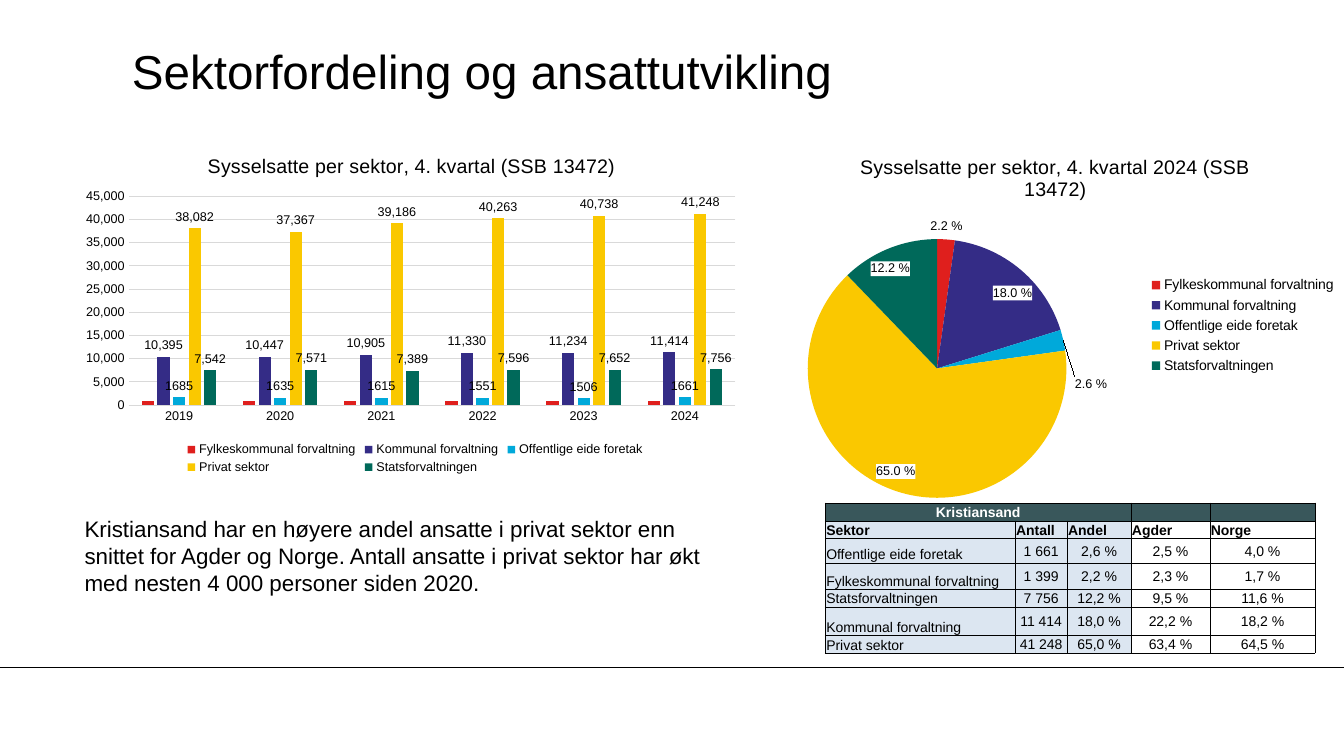
"""Build the slide on employment by sector in Kristiansand."""
from dataclasses import dataclass
from typing import Any

import pptx
import pptx.chart.data
import pptx.dml.color
import pptx.enum.chart
import pptx.enum.shapes
import pptx.enum.text
import pptx.oxml
import pptx.oxml.ns
import pptx.util

Pt = pptx.util.Pt
RGBColor = pptx.dml.color.RGBColor
Align = pptx.enum.text.PP_ALIGN
Anchor = pptx.enum.text.MSO_ANCHOR
ChartKind = pptx.enum.chart.XL_CHART_TYPE
LegendSide = pptx.enum.chart.XL_LEGEND_POSITION
LabelSide = pptx.enum.chart.XL_LABEL_POSITION
NO_TICK = pptx.enum.chart.XL_TICK_MARK.NONE

BLACK = RGBColor(0x00, 0x00, 0x00)
WHITE = RGBColor(0xFF, 0xFF, 0xFF)
GRID = RGBColor(0xD9, 0xD9, 0xD9)
HEADER = RGBColor(0x39, 0x57, 0x5B)
PALE_BLUE = RGBColor(0xDC, 0xE6, 0xF1)
RED = RGBColor(0xDF, 0x1F, 0x1D)
INDIGO = RGBColor(0x34, 0x2C, 0x86)
CYAN = RGBColor(0x00, 0xA9, 0xDA)
YELLOW = RGBColor(0xFA, 0xC8, 0x00)
GREEN = RGBColor(0x00, 0x69, 0x5A)

YEARS = ["2019", "2020", "2021", "2022", "2023", "2024"]
PERCENT = r"0.0\ %"
CHART_NS = 'xmlns:c="http://schemas.openxmlformats.org/drawingml/2006/chart"'
DRAW_NS = 'xmlns:a="http://schemas.openxmlformats.org/drawingml/2006/main"'


@dataclass(frozen=True)
class Box:
    left: float
    top: float
    width: float
    height: float

    def lengths(self) -> list[Any]:
        return [Pt(v) for v in (self.left, self.top, self.width, self.height)]


@dataclass(frozen=True)
class Sector:
    name: str
    color: RGBColor
    employed: list[int]
    share: float
    label_format: str | None = "#,##0"


SECTORS = [
    Sector("Fylkeskommunal forvaltning", RED, [1000] * 6, 2.2, None),
    Sector("Kommunal forvaltning", INDIGO, [10395, 10447, 10905, 11330, 11234, 11414], 18),
    Sector("Offentlige eide foretak", CYAN, [1685, 1635, 1615, 1551, 1506, 1661], 2.6, "General"),
    Sector("Privat sektor", YELLOW, [38082, 37367, 39186, 40263, 40738, 41248], 65),
    Sector("Statsforvaltningen", GREEN, [7542, 7571, 7389, 7596, 7652, 7756], 12.2),
]
TABLE_ROWS = [
    ["Kristiansand", "", "", "", ""],
    ["Sektor", "Antall", "Andel", "Agder", "Norge"],
    ["Offentlige eide foretak", "1 661", "2,6 %", "2,5 %", "4,0 %"],
    ["Fylkeskommunal forvaltning", "1 399", "2,2 %", "2,3 %", "1,7 %"],
    ["Statsforvaltningen", "7 756", "12,2 %", "9,5 %", "11,6 %"],
    ["Kommunal forvaltning", "11 414", "18,0 %", "22,2 %", "18,2 %"],
    ["Privat sektor", "41 248", "65,0 %", "63,4 %", "64,5 %"],
]
COLUMN_WIDTHS = [135.6, 37.2, 45.6, 56.4, 75.2]
ROW_HEIGHTS = [12.6, 12.6, 17.3, 18.7, 12.6, 20.2, 12.6]


def apply(target: Any, values: dict[str, Any]) -> None:
    for attribute, value in values.items():
        setattr(target, attribute, value)


def set_font(font: Any, size: float, color: RGBColor = BLACK, bold: bool = False) -> None:
    apply(font, {"name": "Arial", "size": Pt(size), "bold": bold})
    font.color.rgb = color


def add_text(slide: Any, box: Box, text: str, size: float, frame_format: dict[str, Any]) -> None:
    frame = slide.shapes.add_textbox(*box.lengths()).text_frame
    apply(frame, {"word_wrap": True, **frame_format})
    frame.text = text
    set_font(frame.paragraphs[0].runs[0].font, size)


def place(parent: Any, index: int, **values: float) -> None:
    for previous in parent.findall(pptx.oxml.ns.qn("c:layout")):
        parent.remove(previous)
    modes = ""
    if "w" in values:
        target = '<c:layoutTarget val="inner"/>' if parent.tag.endswith("plotArea") else ""
        modes = target + '<c:xMode val="edge"/><c:yMode val="edge"/>'
    sizes = "".join(f'<c:{key} val="{value}"/>' for key, value in values.items())
    parent.insert(index, pptx.oxml.parse_xml(
        f"<c:layout {CHART_NS}><c:manualLayout>{modes}{sizes}</c:manualLayout></c:layout>"))


def add_chart(slide: Any, kind: Any, box: Box, data: Any, title: str,
              side: Any, legend_size: float) -> Any:
    chart = slide.shapes.add_chart(kind, *box.lengths(), data).chart
    set_font(chart.font, 10)
    chart.has_title = True
    chart.chart_title.include_in_layout = False
    chart.chart_title.text_frame.text = title
    set_font(chart.chart_title.text_frame.paragraphs[0].runs[0].font, 14)
    chart.has_legend = True
    apply(chart.legend, {"position": side, "include_in_layout": False})
    set_font(chart.legend.font, legend_size)
    return chart


def add_sector_columns(slide: Any) -> None:
    data = pptx.chart.data.CategoryChartData()
    data.categories = YEARS
    for sector in SECTORS:
        data.add_series(sector.name, sector.employed)
    chart = add_chart(slide, ChartKind.COLUMN_CLUSTERED, Box(53.3, 98.6, 481.7, 244.8), data,
                      "Sysselsatte per sektor, 4. kvartal (SSB 13472)", LegendSide.BOTTOM, 9)
    plot = chart.plots[0]
    apply(plot, {"gap_width": 219, "overlap": -27, "vary_by_categories": False})
    for sector, series in zip(SECTORS, plot.series):
        series.format.fill.solid()
        series.format.fill.fore_color.rgb = sector.color
        if sector.label_format:
            apply(series.data_labels, {
                "show_value": True, "number_format": sector.label_format,
                "number_format_is_linked": False, "position": LabelSide.OUTSIDE_END})
            set_font(series.data_labels.font, 9)
    for axis in (chart.category_axis, chart.value_axis):
        apply(axis, {"major_tick_mark": NO_TICK, "minor_tick_mark": NO_TICK})
        set_font(axis.tick_labels.font, 9)
    apply(chart.value_axis, {"minimum_scale": 0, "maximum_scale": 45000, "major_unit": 5000})
    apply(chart.value_axis.tick_labels,
          {"number_format": "#,##0", "number_format_is_linked": False})
    chart.value_axis.format.line.fill.background()
    for line in (chart.category_axis.format.line, chart.value_axis.major_gridlines.format.line):
        line.color.rgb = GRID
        line.width = Pt(0.75)
    place(chart._chartSpace.xpath(".//c:plotArea")[0], 0, x=0.08, y=0.17, w=0.9, h=0.61)
    place(chart.legend._element, 1, x=0.16, y=0.88, w=0.69, h=0.11)


def add_share_pie(slide: Any) -> None:
    data = pptx.chart.data.CategoryChartData()
    data.categories = [sector.name for sector in SECTORS]
    data.add_series("Series 1", [sector.share for sector in SECTORS])
    chart = add_chart(slide, ChartKind.PIE, Box(547.9, 98.6, 411.8, 267.8), data,
                      "Sysselsatte per sektor, 4. kvartal 2024 (SSB 13472)", LegendSide.RIGHT, 10)
    series = chart.plots[0].series[0]
    for index, sector in enumerate(SECTORS):
        fill = series.points[index].format.fill
        fill.solid()
        fill.fore_color.rgb = sector.color
    labels = series.data_labels
    apply(labels, {"show_percentage": True, "show_value": False, "number_format": PERCENT,
                   "number_format_is_linked": False, "position": LabelSide.BEST_FIT})
    set_font(labels.font, 9)
    labels._element.find(pptx.oxml.ns.qn("c:numFmt")).addnext(pptx.oxml.parse_xml(
        f'<c:spPr {CHART_NS} {DRAW_NS}><a:solidFill><a:srgbClr val="{WHITE}"/>'
        "</a:solidFill></c:spPr>"))
    enterprise_label = series.points[2].data_label
    enterprise_label.position = LabelSide.OUTSIDE_END
    set_font(enterprise_label.font, 9)
    label = labels._element.xpath("c:dLbl")[0]
    for tag, shown in {"c:showVal": "0", "c:showPercent": "1"}.items():
        label.find(pptx.oxml.ns.qn(tag)).set("val", shown)
    place(label, 1, x=0.01, y=0.14)
    label.insert(2, pptx.oxml.parse_xml(
        f'<c:numFmt {CHART_NS} formatCode="{PERCENT}" sourceLinked="0"/>'))
    place(chart._chartSpace.xpath(".//c:plotArea")[0], 0, x=0.07, y=0.27, w=0.45, h=0.69)
    place(chart.legend._element, 1, x=0.66, y=0.36, w=0.33, h=0.28)


def fill_cell(cell: Any, text: str, row: int, column: int) -> None:
    figure = row > 1 and column > 0
    margin = Pt(0.72)
    apply(cell, {"margin_left": margin, "margin_right": margin, "margin_top": margin,
                 "margin_bottom": 0, "vertical_anchor": Anchor.MIDDLE if figure else Anchor.BOTTOM})
    paragraph = cell.text_frame.paragraphs[0]
    paragraph.alignment = Align.CENTER if figure or row == 0 else Align.LEFT
    if text:
        paragraph.add_run().text = text
        set_font(paragraph.runs[0].font, 10, BLACK if row else WHITE, row < 2)
    else:
        paragraph._p.append(pptx.oxml.parse_xml(f'<a:endParaRPr {DRAW_NS} sz="1000"/>'))
    if row == 0 or column < 3:
        cell.fill.solid()
        cell.fill.fore_color.rgb = PALE_BLUE if row else HEADER
    else:
        cell.fill.background()
    for order, side in enumerate("LRTB"):
        cell._tc.get_or_add_tcPr().insert(order, pptx.oxml.parse_xml(
            f'<a:ln{side} {DRAW_NS} w="{Pt(0.5)}"><a:solidFill><a:srgbClr val="{BLACK}"/>'
            f"</a:solidFill></a:ln{side}>"))


def add_sector_table(slide: Any) -> None:
    box = Box(589.5, 359.3, sum(COLUMN_WIDTHS), sum(ROW_HEIGHTS))
    table = slide.shapes.add_table(len(TABLE_ROWS), len(COLUMN_WIDTHS), *box.lengths()).table
    apply(table, {"first_row": False, "horz_banding": False})
    for column, width in zip(table.columns, COLUMN_WIDTHS):
        column.width = Pt(width)
    for row, height in zip(table.rows, ROW_HEIGHTS):
        row.height = Pt(height)
    for row, texts in enumerate(TABLE_ROWS):
        for column, text in enumerate(texts):
            fill_cell(table.cell(row, column), text, row, column)
    table.cell(0, 0).merge(table.cell(0, 2))


def main() -> None:
    deck = pptx.Presentation()
    apply(deck, {"slide_width": Pt(960), "slide_height": Pt(540)})
    slide = deck.slides.add_slide(deck.slide_layouts[6])
    footer_rule = slide.shapes.add_connector(
        pptx.enum.shapes.MSO_CONNECTOR.STRAIGHT, Pt(0), Pt(476.6), Pt(960), Pt(476.6))
    footer_rule.line.color.rgb = BLACK
    footer_rule.line.width = Pt(0.75)
    footer_rule._element.spPr.append(pptx.oxml.parse_xml(f"<a:effectLst {DRAW_NS}/>"))
    add_text(slide, Box(94.3, 23, 799.2, 54), "Sektorfordeling og ansattutvikling", 34,
             {"vertical_anchor": Anchor.MIDDLE, "margin_left": 0, "margin_right": 0,
              "margin_top": 0, "margin_bottom": 0})
    add_text(slide, Box(53.3, 364.3, 461.5, 65.5),
             "Kristiansand har en høyere andel ansatte i privat sektor enn snittet for Agder og "
             "Norge. Antall ansatte i privat sektor har økt med nesten 4 000 personer siden 2020.",
             16, {"auto_size": pptx.enum.text.MSO_AUTO_SIZE.SHAPE_TO_FIT_TEXT})
    add_sector_table(slide)
    add_sector_columns(slide)
    add_share_pie(slide)
    deck.save("out.pptx")


if __name__ == "__main__":
    main()
